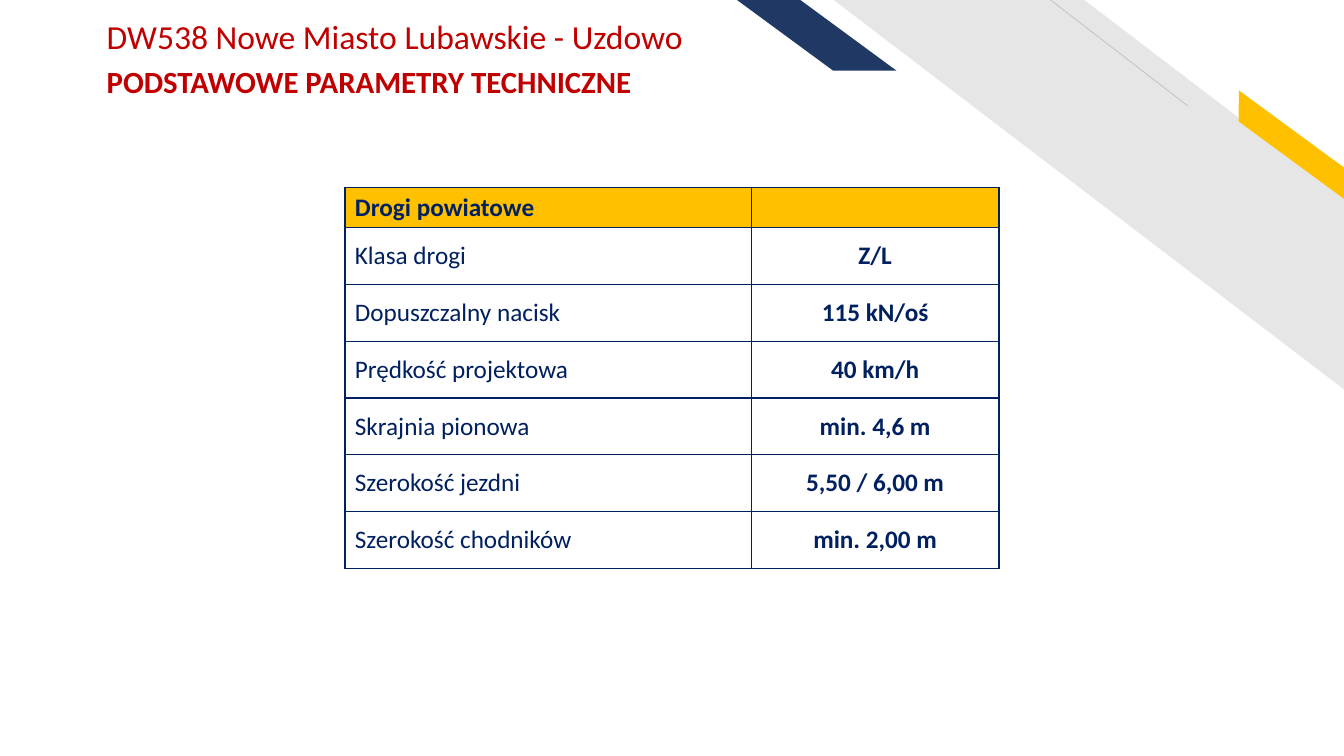
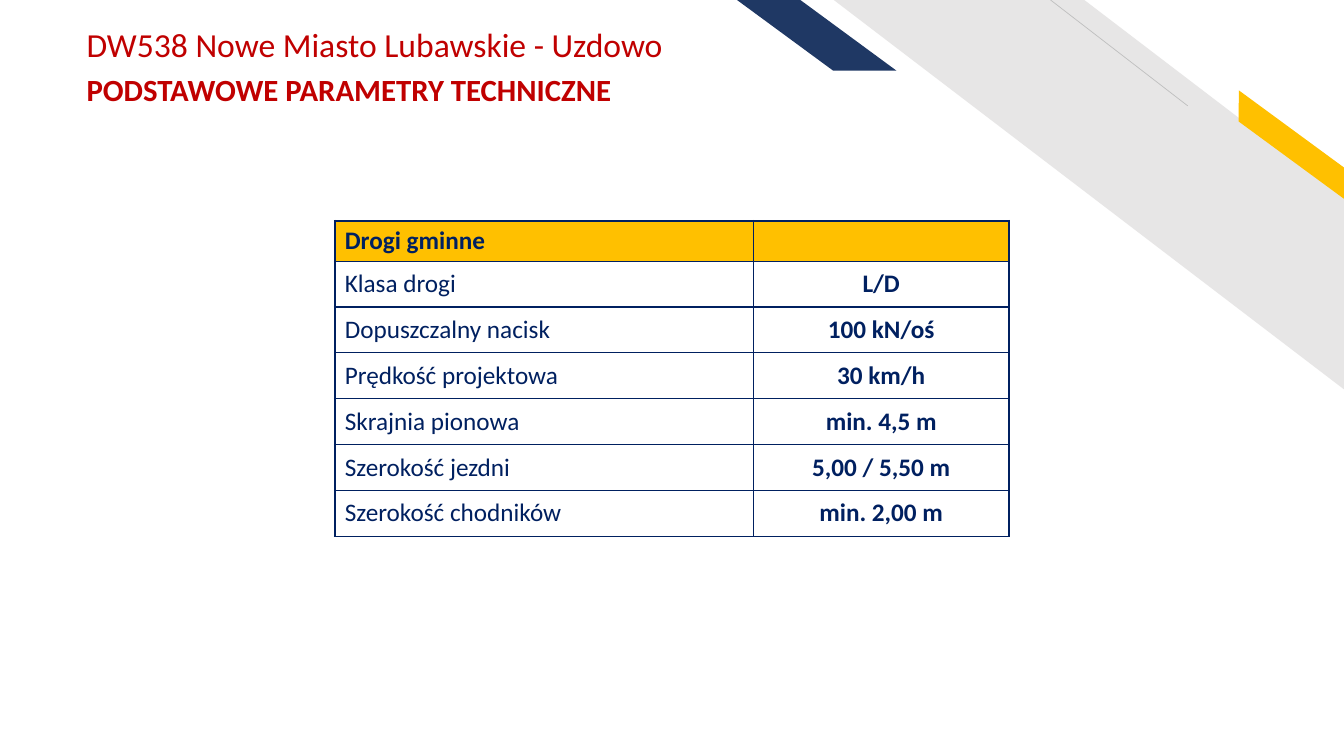
"""Two slides of road parameters, each a table under a shared title and bands."""
from lxml.etree import SubElement
from pptx import Presentation
from pptx.dml.color import RGBColor
from pptx.enum.shapes import MSO_CONNECTOR as Link, MSO_SHAPE as Form
from pptx.enum.text import MSO_ANCHOR as Anchor, PP_ALIGN as Align
from pptx.oxml.ns import qn
from pptx.util import Inches, Pt

NAVY = RGBColor(0x1F, 0x38, 0x64)
GREY = RGBColor(0xE7, 0xE6, 0xE6)
RULE = RGBColor(0xBF, 0xBF, 0xBF)
GOLD = RGBColor(0xFF, 0xC0, 0x00)
RED = RGBColor(0xC0, 0x00, 0x00)
BLUE = RGBColor(0x00, 0x20, 0x60)
WHITE = RGBColor(0xFF, 0xFF, 0xFF)
FACE = "Calibri"

TITLE = [
    ("DW538 Nowe Miasto Lubawskie - Uzdowo", 24, False, 0),
    ("PODSTAWOWE PARAMETRY TECHNICZNE", 22, True, 4.4),
]
LABELS = ["Klasa drogi", "Dopuszczalny nacisk", "Prędkość projektowa",
          "Skrajnia pionowa", "Szerokość jezdni", "Szerokość chodników"]
ROADS = [
    {
        "head": "Drogi powiatowe", "title": (0.96, 0.11),
        "place": (3.42, 1.86), "cols": (4.03, 2.46), "high": 3.78,
        "vals": ["Z/L", "115 kN/oś", "40 km/h", "min. 4,6 m",
                 "5,50 / 6,00 m", "min. 2,00 m"],
    },
    {
        "head": "Drogi gminne", "title": (0.76, 0.19),
        "place": (3.32, 2.19), "cols": (4.15, 2.54), "high": 3.13,
        "vals": ["L/D", "100 kN/oś", "30 km/h", "min. 4,5 m",
                 "5,00 / 5,50 m", "min. 2,00 m"],
    },
]
BANDS = [
    (Form.PARALLELOGRAM, (7.31, 0, 1.58, 0.7), 1.36, 0, NAVY),
    (Form.DIAGONAL_STRIPE, (8.27, 0, 5.07, 3.87), 0.51, 0, GREY),
    (Form.PARALLELOGRAM, (12.07, 1.31, 1.48, 0.25), 0.72, 36.3, GOLD),
]
THIN_LINE = (11.78, 1.05, 10.42, 0)
HEAD_HIGH = 0.4


def style(font, **values):
    font.color.rgb = values.pop("color")
    for name, value in values.items():
        setattr(font, name, value)


def add_bands(slide):
    for form, box, bend, turn, color in BANDS:
        band = slide.shapes.add_shape(form, *map(Inches, box))
        band.adjustments[0] = bend
        band.rotation = turn
        band.element.spPr.get_or_add_xfrm().set("flipH", "1")
        band.shadow.inherit = False
        band.fill.solid()
        band.fill.fore_color.rgb = color
        band.line.fill.background()
    line = slide.shapes.add_connector(Link.STRAIGHT, *map(Inches, THIN_LINE))
    line.line.color.rgb = RULE
    line.line.width = Pt(0.5)
    SubElement(line.element.spPr, qn("a:effectLst"))


def add_title(slide, place):
    box = slide.shapes.add_textbox(*map(Inches, (*place, 7.09, 0.91)))
    frame = box.text_frame
    frame.word_wrap = True
    for i, (text, size, bold, gap) in enumerate(TITLE):
        para = frame.paragraphs[0] if i == 0 else frame.add_paragraph()
        para.text = text
        if gap:
            para.space_before = Pt(gap)
        style(para.font, name=FACE, size=Pt(size), bold=bold, color=RED)


def add_edges(cell, row, col):
    outer = {"L": col == 0, "R": col == 1, "T": row == 0, "B": False}
    props = cell._tc.get_or_add_tcPr()
    for side, thick in outer.items():
        width = Pt(1.5 if thick else 1)
        edge = SubElement(props, qn(f"a:ln{side}"), w=str(width))
        fill = SubElement(edge, qn("a:solidFill"))
        SubElement(fill, qn("a:srgbClr"), val=str(BLUE))


def add_params(slide, road):
    rows = [(road["head"], ""), *zip(LABELS, road["vals"])]
    cols, high = road["cols"], road["high"]
    box = (*road["place"], sum(cols), high)
    table = slide.shapes.add_table(len(rows), 2, *map(Inches, box)).table
    table.first_row = table.horz_banding = False
    for col, width in zip(table.columns, cols):
        col.width = Inches(width)
    step = (high - HEAD_HIGH) / len(LABELS)
    for r, texts in enumerate(rows):
        table.rows[r].height = Inches(step if r else HEAD_HIGH)
        for c, text in enumerate(texts):
            cell = table.cell(r, c)
            add_edges(cell, r, c)
            cell.fill.solid()
            cell.fill.fore_color.rgb = WHITE if r else GOLD
            cell.vertical_anchor = Anchor.MIDDLE
            cell.text = text
            para = cell.text_frame.paragraphs[0]
            para.alignment = Align.CENTER if c else Align.LEFT
            style(para.font, name=FACE, size=Pt(18),
                  bold=r == 0 or c == 1, color=BLUE)


def main():
    deck = Presentation()
    deck.slide_width, deck.slide_height = Inches(13.33), Inches(7.5)
    for road in ROADS:
        slide = deck.slides.add_slide(deck.slide_layouts[6])
        add_bands(slide)
        add_title(slide, road["title"])
        add_params(slide, road)
    deck.save("out.pptx")


if __name__ == "__main__":
    main()
